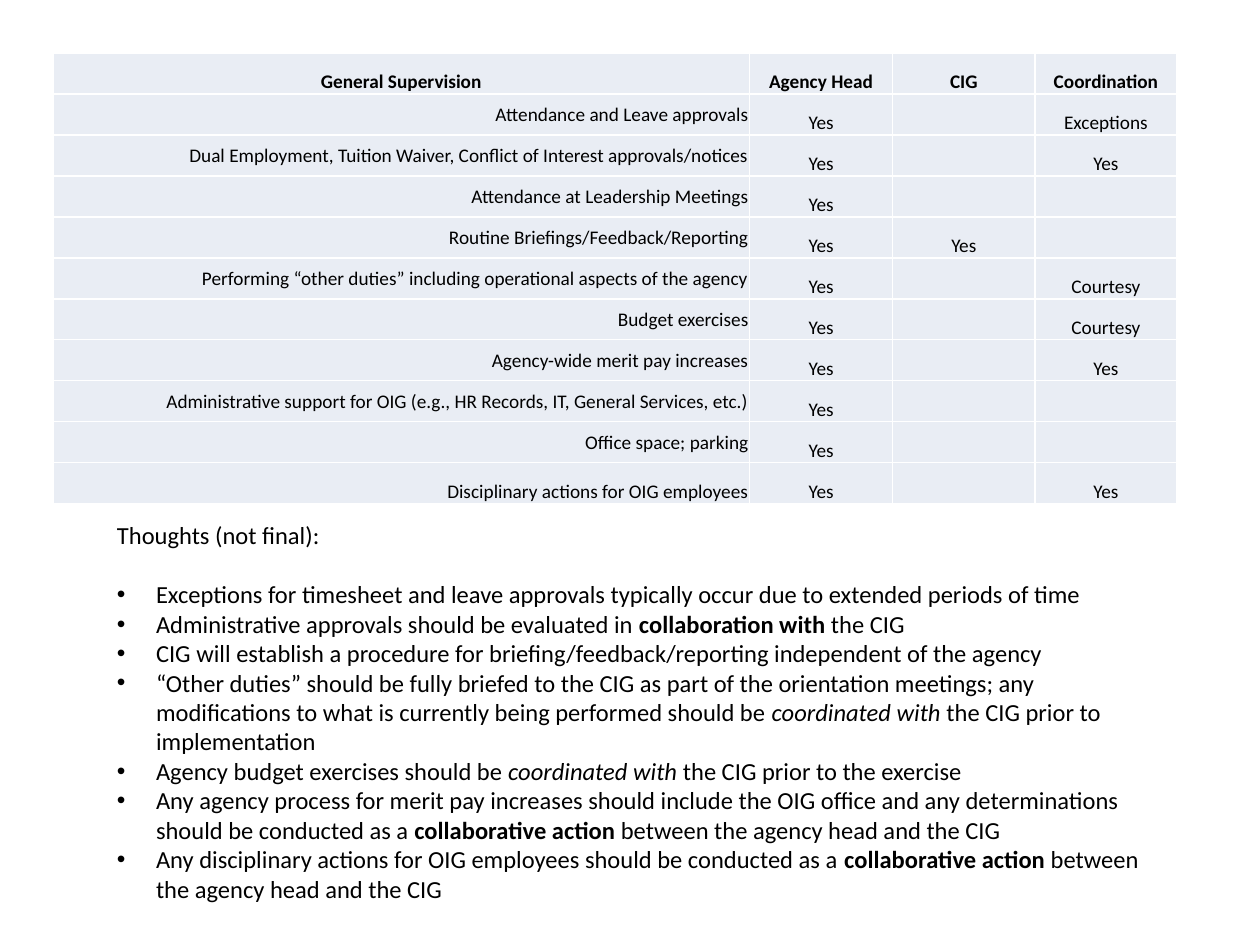
from lxml.etree import SubElement
from pptx import Presentation
from pptx.dml.color import RGBColor
from pptx.enum.text import MSO_ANCHOR as ANCHOR, PP_ALIGN as ALIGN
from pptx.oxml.ns import qn
from pptx.util import Inches, Pt

COLORS = {"text": "000000", "cell": "E9EDF4", "border": "FFFFFF"}
FONT = "Calibri"
SLIDE_W, SLIDE_H = Inches(10), Inches(7.5)

# Boxes as shares of the slide: left, top, width, height
TABLE_BOX = (0.042, 0.056, 0.892, 0.477)
NOTES_BOX = (0.083, 0.544, 0.858, 0.421)
COLUMN_SHARES = (0.62, 0.127, 0.127, 0.126)

HEADERS = ("General Supervision", "Agency Head", "CIG", "Coordination")
DUTIES = [
    ("Attendance and Leave approvals", "Yes", "", "Exceptions"),
    ("Dual Employment, Tuition Waiver, Conflict of Interest approvals/notices", "Yes", "", "Yes"),
    ("Attendance at Leadership Meetings", "Yes", "", ""),
    ("Routine Briefings/Feedback/Reporting", "Yes", "Yes", ""),
    ("Performing “other duties” including operational aspects of the agency", "Yes", "", "Courtesy"),
    ("Budget exercises", "Yes", "", "Courtesy"),
    ("Agency-wide merit pay increases", "Yes", "", "Yes"),
    ("Administrative support for OIG (e.g., HR Records, IT, General Services, etc.)", "Yes", "", ""),
    ("Office space; parking", "Yes", "", ""),
    ("Disciplinary actions for OIG employees", "Yes", "", "Yes"),
]

# Each thought is a list of runs: (text, style)
THOUGHTS = [
    [("Exceptions for timesheet and leave approvals typically occur due to extended periods of time", "")],
    [("Administrative approvals should be evaluated in ", ""),
     ("collaboration with ", "bold"), ("the CIG", "")],
    [("CIG will establish a procedure for briefing/feedback/reporting independent of the agency", "")],
    [("“Other duties” should be fully briefed to the CIG as part of the orientation meetings; any "
      "modifications to what is currently being performed should be ", ""),
     ("coordinated with ", "italic"), ("the CIG prior to implementation", "")],
    [("Agency budget exercises should be ", ""),
     ("coordinated with ", "italic"), ("the CIG prior to the exercise", "")],
    [("Any agency process for merit pay increases should include the OIG office and any "
      "determinations should be conducted as a ", ""),
     ("collaborative action ", "bold"), ("between the agency head and the CIG", "")],
    [("Any disciplinary actions for OIG employees should be conducted as a ", ""),
     ("collaborative action ", "bold"), ("between the agency head and the CIG", "")],
]


def to_emu(box):
    left, top, width, height = box
    return (int(SLIDE_W * left), int(SLIDE_H * top),
            int(SLIDE_W * width), int(SLIDE_H * height))


def add_run(p, text, size, style=""):
    r = p.add_run()
    r.text = text
    r.font.name, r.font.size = FONT, Pt(size)
    r.font.bold, r.font.italic = style == "bold", style == "italic"
    r.font.color.rgb = RGBColor.from_string(COLORS["text"])


def format_cell(cell):
    cell.margin_left = cell.margin_top = cell.margin_right = Inches(0.01)
    cell.margin_bottom = 0
    tc_pr = cell._tc.get_or_add_tcPr()
    for side in ("lnL", "lnR", "lnT", "lnB"):
        line = SubElement(tc_pr, qn(f"a:{side}"), w=str(Pt(1)))
        fill = SubElement(line, qn("a:solidFill"))
        SubElement(fill, qn("a:srgbClr"), val=COLORS["border"])
    cell.fill.solid()
    cell.fill.fore_color.rgb = RGBColor.from_string(COLORS["cell"])


def add_supervision_table(s, box):
    rows = [HEADERS, *DUTIES]
    left, top, width, height = to_emu(box)
    table = s.shapes.add_table(len(rows), len(HEADERS), left, top, width, height).table
    table.first_row = table.horz_banding = False
    for column, share in zip(table.columns, COLUMN_SHARES):
        column.width = int(width * share)
    last = len(rows) - 1
    for i, values in enumerate(rows):
        table.rows[i].height = height // len(rows)
        for j, value in enumerate(values):
            cell = table.cell(i, j)
            format_cell(cell)
            is_duty = i > 0 and j == 0
            cell.vertical_anchor = ANCHOR.MIDDLE if is_duty and i < last else ANCHOR.BOTTOM
            p = cell.text_frame.paragraphs[0]
            p.alignment = ALIGN.RIGHT if is_duty else ALIGN.CENTER
            if i > 0 and j > 0:
                p.space_after = Pt(12)
            if value:
                add_run(p, value, 11, "bold" if i == 0 else "")


def add_bullet(p):
    p_pr = p._p.get_or_add_pPr()
    indent = Inches(0.31)
    p_pr.set("marL", str(indent))
    p_pr.set("indent", str(-indent))
    SubElement(p_pr, qn("a:buFont"), typeface="Arial")
    SubElement(p_pr, qn("a:buChar"), char="•")


def add_thoughts(s, box):
    tf = s.shapes.add_textbox(*to_emu(box)).text_frame
    tf.word_wrap = True
    # Lead-in, set one line apart from the bullets
    p = tf.paragraphs[0]
    p.space_after = Pt(17)
    add_run(p, "Thoughts (not final):", 14)
    # Bullets
    for runs in THOUGHTS:
        p = tf.add_paragraph()
        add_bullet(p)
        for text, style in runs:
            add_run(p, text, 14, style)


def main():
    prs = Presentation()
    prs.slide_width, prs.slide_height = SLIDE_W, SLIDE_H
    s = prs.slides.add_slide(prs.slide_layouts[6])
    add_supervision_table(s, TABLE_BOX)
    add_thoughts(s, NOTES_BOX)
    prs.save("out.pptx")


if __name__ == "__main__":
    main()
